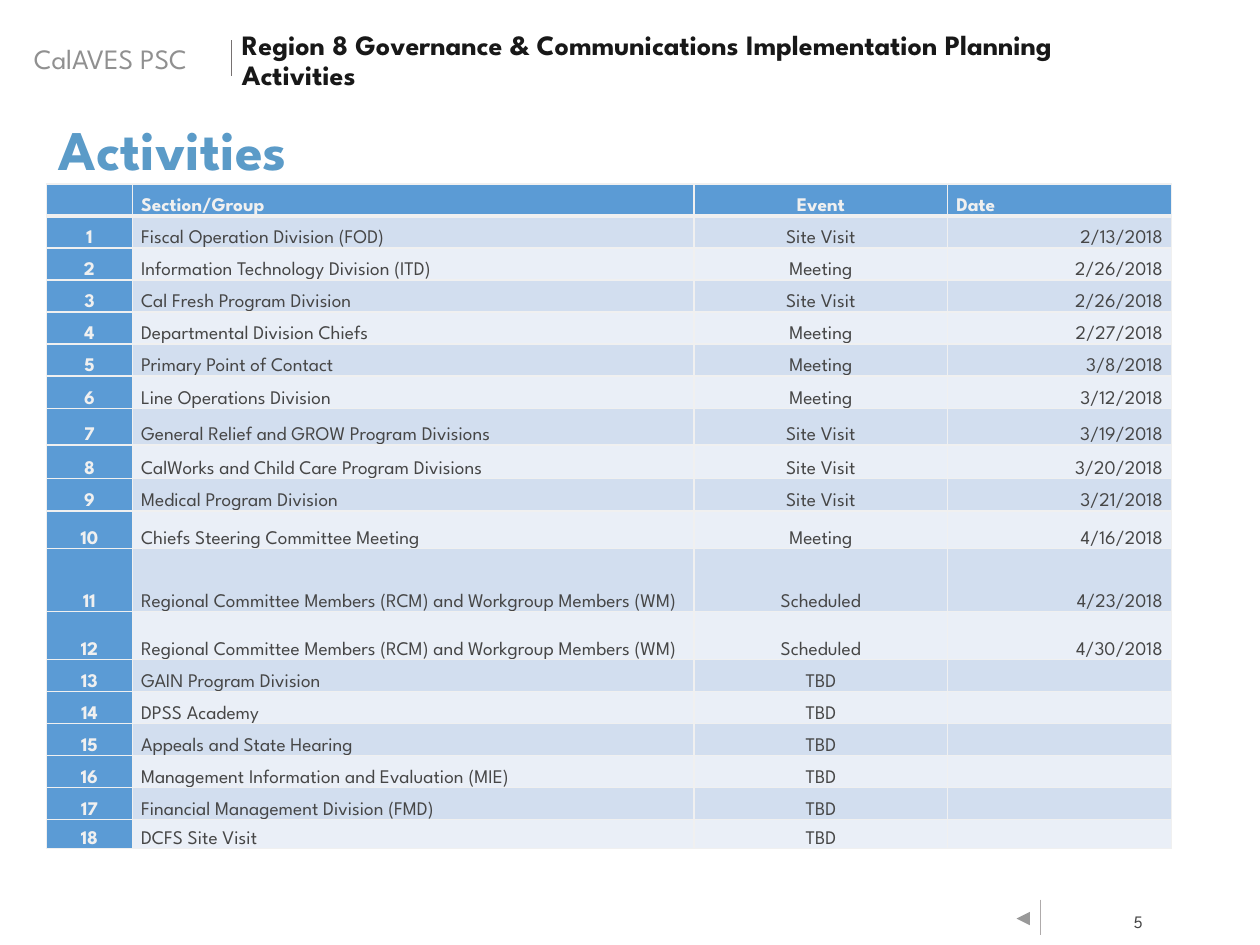
from lxml import etree
from pptx import Presentation
from pptx import util as u
from pptx.dml.color import RGBColor
from pptx.enum import shapes, text
from pptx.oxml import ns

FONT = "League Spartan"
WHITE = RGBColor(0xFF, 0xFF, 0xFF)
NEAR_WHITE = RGBColor(0xF0, 0xF0, 0xF0)
INK = RGBColor(0x18, 0x18, 0x18)
BODY = RGBColor(0x46, 0x46, 0x46)
BRAND_GRAY = RGBColor(0x90, 0x90, 0x90)
HEADER_RULE = RGBColor(0x76, 0x71, 0x71)
FOOTER_RULE = RGBColor(0xAF, 0xAB, 0xAB)
HEADING_BLUE = RGBColor(0x5B, 0x9B, 0xC8)
TABLE_BLUE = RGBColor(0x5B, 0x9B, 0xD5)
BAND_DARK = RGBColor(0xD2, 0xDE, 0xEF)
BAND_LIGHT = RGBColor(0xEA, 0xEF, 0xF7)

LEFT, CENTER, RIGHT = text.PP_ALIGN.LEFT, text.PP_ALIGN.CENTER, text.PP_ALIGN.RIGHT
COLUMN_WIDTHS = [0.68, 4.46, 2.01, 1.78]
SPECIAL_HEIGHTS = {7: 0.29, 8: 0.27, 10: 0.3, 11: 0.5, 12: 0.38, 18: 0.23}
COLUMN_HEADS = ("", "Section/Group", "Event", "Date")
ACTIVITIES = [
    ("Fiscal Operation Division (FOD)", "Site Visit", "2/13/2018"),
    ("Information Technology Division (ITD)", "Meeting", "2/26/2018"),
    ("Cal Fresh Program Division", "Site Visit", "2/26/2018"),
    ("Departmental Division Chiefs", "Meeting", "2/27/2018"),
    ("Primary Point of Contact", "Meeting", "3/8/2018"),
    ("Line Operations Division", "Meeting", "3/12/2018"),
    ("General Relief and GROW Program Divisions", "Site Visit", "3/19/2018"),
    ("CalWorks and Child Care Program Divisions", "Site Visit", "3/20/2018"),
    ("Medical Program Division", "Site Visit", "3/21/2018"),
    ("Chiefs Steering Committee Meeting", "Meeting", "4/16/2018"),
    ("Regional Committee Members (RCM) and Workgroup Members (WM)", "Scheduled", "4/23/2018"),
    ("Regional Committee Members (RCM) and Workgroup Members (WM)", "Scheduled", "4/30/2018"),
    ("GAIN Program Division", "TBD", ""),
    ("DPSS Academy", "TBD", ""),
    ("Appeals and State Hearing", "TBD", ""),
    ("Management Information and Evaluation (MIE)", "TBD", ""),
    ("Financial Management Division (FMD)", "TBD", ""),
    ("DCFS Site Visit", "TBD", ""),
]


def apply(target, formats):
    for attribute, value in formats.items():
        setattr(target, attribute, value)


def inches(*lengths):
    return [u.Inches(length) for length in lengths]


def write(frame, words, size, color, bold=False, frame_format=None, **paragraph_format):
    apply(frame, {"word_wrap": True, "auto_size": text.MSO_AUTO_SIZE.NONE, **(frame_format or {})})
    paragraph = frame.paragraphs[0]
    apply(paragraph, {"alignment": LEFT, **paragraph_format})
    run = paragraph.add_run()
    run.text = words
    apply(run.font, {"name": FONT, "size": u.Pt(size), "bold": bold})
    run.font.color.rgb = color


def add_rule(slide, x, top, bottom, color):
    rule = slide.shapes.add_connector(
        shapes.MSO_CONNECTOR.STRAIGHT, *inches(x, top, x, bottom))
    rule.line.color.rgb = color
    rule.line.width = u.Pt(0.5)
    etree.SubElement(rule._element.spPr, ns.qn("a:effectLst"))


def add_header(slide, left, top, width, height):
    middle = {"margin_left": 0, "margin_right": 0,
              "vertical_anchor": text.MSO_ANCHOR.MIDDLE}
    brand = slide.shapes.add_textbox(*inches(left, top, 1.5, height))
    write(brand.text_frame, "CalAVES PSC", 16, BRAND_GRAY, frame_format=middle)
    add_rule(slide, left + 1.57, top + 0.04, top + 0.32, HEADER_RULE)

    title = slide.shapes.title
    title_left = left + 1.65
    apply(title, dict(zip(("left", "top", "width", "height"),
                          inches(title_left, top + 0.02, left + width - title_left, height))))
    write(title.text_frame,
          "Region 8 Governance & Communications Implementation Planning Activities",
          16, INK, True, middle, line_spacing=0.9, space_before=u.Pt(10))


def add_heading(slide, left, top, width, height):
    heading = slide.shapes.add_textbox(*inches(left, top, width, height))
    write(heading.text_frame, "Activities", 32, HEADING_BLUE, True,
          line_spacing=0.9, space_before=u.Pt(10))


def add_borders(cell, widths):
    properties = cell._tc.get_or_add_tcPr()
    for side, points in widths.items():
        border = etree.SubElement(properties, ns.qn(f"a:ln{side}"), w=str(u.Pt(points)))
        fill = etree.SubElement(border, ns.qn("a:solidFill"))
        etree.SubElement(fill, ns.qn("a:srgbClr"), val=str(NEAR_WHITE))


def fill_cell(cell, words, row, column):
    is_label = row == 0 or column == 0
    add_borders(cell, {"L": 1, "R": 1, "T": 3 if row == 1 else 1, "B": 3 if row == 0 else 1})
    cell.fill.solid()
    cell.fill.fore_color.rgb = (
        TABLE_BLUE if is_label else BAND_DARK if row % 2 else BAND_LIGHT)
    apply(cell, {"margin_left": u.Inches(0.07), "margin_right": u.Inches(0.07),
                 "margin_top": 0, "margin_bottom": 0,
                 "vertical_anchor": text.MSO_ANCHOR.BOTTOM})
    if words:
        alignment = (CENTER, LEFT, CENTER, RIGHT if row else LEFT)[column]
        write(cell.text_frame, words, 11, NEAR_WHITE if is_label else BODY, is_label,
              alignment=alignment)
    else:
        etree.SubElement(cell.text_frame.paragraphs[0]._p, ns.qn("a:endParaRPr"), sz="1100")


def add_activity_table(slide, left, top, width, height):
    rows = [COLUMN_HEADS]
    rows += [(str(number), *activity) for number, activity in enumerate(ACTIVITIES, 1)]
    table = slide.shapes.add_table(
        len(rows), len(COLUMN_HEADS), *inches(left, top, width, height)).table
    table.horz_banding = False
    for column, column_width in zip(table.columns, COLUMN_WIDTHS):
        column.width = u.Inches(column_width)
    regular_height = ((height - sum(SPECIAL_HEIGHTS.values()))
                      / (len(rows) - len(SPECIAL_HEIGHTS)))
    for row, entries in enumerate(rows):
        table.rows[row].height = u.Inches(SPECIAL_HEIGHTS.get(row, regular_height))
        for column, words in enumerate(entries):
            fill_cell(table.cell(row, column), words, row, column)


def add_footer(slide, left, top, width, height):
    back = slide.shapes.add_shape(
        shapes.MSO_SHAPE.ACTION_BUTTON_FORWARD_OR_NEXT,
        *inches(left, top + 0.06, 0.14, 0.18))
    back.rotation = 180
    back.shadow.inherit = False
    back.fill.solid()
    back.fill.fore_color.rgb = WHITE
    back.line.fill.background()
    add_rule(slide, left + 0.21, top, top + height, FOOTER_RULE)
    page_number = slide.shapes.add_textbox(*inches(left + width - 0.32, top + 0.05, 0.32, 0.24))
    write(page_number.text_frame, "5", 10, BODY, alignment=RIGHT, frame_format={
        "word_wrap": False, "margin_left": u.Inches(0.08), "margin_right": u.Inches(0.08),
        "margin_top": u.Inches(0.04), "margin_bottom": u.Inches(0.04)})


def main():
    deck = Presentation()
    apply(deck, {"slide_width": u.Inches(10), "slide_height": u.Inches(7.5)})
    slide = deck.slides.add_slide(deck.slide_layouts[5])
    add_header(slide, 0.27, 0.28, 8.88, 0.37)
    add_heading(slide, 0.37, 0.92, 8.93, 0.54)
    add_activity_table(slide, 0.37, 1.46, sum(COLUMN_WIDTHS), 5.28)
    add_footer(slide, 8.05, 7.14, 1.1, 0.28)
    deck.save("out.pptx")


if __name__ == "__main__":
    main()
